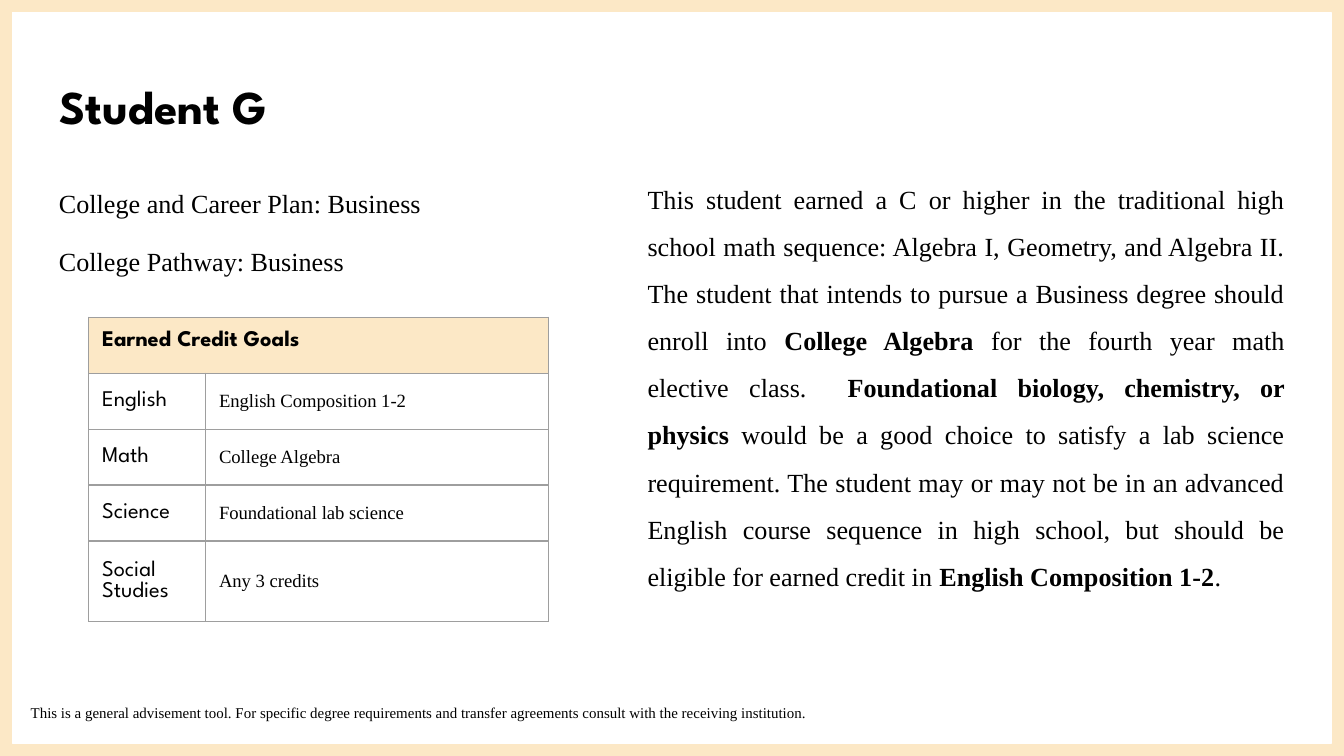
from dataclasses import dataclass

from lxml.etree import SubElement
from pptx import Presentation
from pptx.dml.color import RGBColor
from pptx.enum.shapes import MSO_SHAPE as Shape
from pptx.enum.text import MSO_ANCHOR as Anchor, MSO_AUTO_SIZE as Fit, PP_ALIGN as Align
from pptx.oxml.ns import qn
from pptx.util import Inches, Pt


@dataclass(frozen=True)
class Theme:
    """Colours, fonts and type sizes of the deck."""
    cream: str = "FCE8C6"
    white: str = "FFFFFF"
    ink: str = "000000"
    rule: str = "9E9E9E"
    display: str = "League Spartan"
    serif: str = "Times New Roman"
    title: float = 25.2
    body: float = 14
    label: float = 12
    value: float = 10
    note: float = 8


T = Theme()
WIDTH = 10
HEIGHT = WIDTH * 9 / 16
GOALS = [
    ("English", "English Composition 1-2"),
    ("Math", "College Algebra"),
    ("Science", "Foundational lab science"),
    ("Social Studies", "Any 3 credits"),
]
PLAN = ["College and Career Plan: Business", "College Pathway: Business"]
ADVICE = [
    ("This student earned a C or higher in the traditional high school math "
     "sequence: Algebra I, Geometry, and Algebra II. The student that intends "
     "to pursue a Business degree should enroll into ", False),
    ("College Algebra", True),
    (" for the fourth year math elective class.  ", False),
    ("Foundational biology, chemistry, or physics", True),
    (" would be a good choice to satisfy a lab science requirement. The student "
     "may or may not be in an advanced English course sequence in high school, "
     "but should be eligible for earned credit in ", False),
    ("English Composition 1-2", True),
    (".", False),
]
NOTE = ("This is a general advisement tool. For specific degree requirements and "
        "transfer agreements consult with the receiving institution.")


def rgb(value):
    """Turn a hex string into a colour."""
    return RGBColor.from_string(value)


def add_run(p, text, size, font=T.serif, bold=False):
    """Append one formatted run to a paragraph."""
    r = p.add_run()
    r.text = text
    r.font.size, r.font.name, r.font.bold = Pt(size), font, bold
    r.font.color.rgb = rgb(T.ink)


def set_margins(holder):
    """Give a text frame or cell equal margins."""
    holder.margin_left = holder.margin_right = Inches(0.1)
    holder.margin_top = holder.margin_bottom = Inches(0.1)


def add_text(s, box, anchor=Anchor.TOP):
    """Add an empty wrapping text box and return its frame."""
    tf = s.shapes.add_textbox(*map(Inches, box)).text_frame
    tf.word_wrap = True
    tf.vertical_anchor = anchor
    set_margins(tf)
    return tf


def add_panel(s, width, height):
    """Centre the white page behind everything on the cream background."""
    s.background.fill.solid()
    s.background.fill.fore_color.rgb = rgb(T.cream)
    box = ((WIDTH - width) / 2, (HEIGHT - height) / 2, width, height)
    sp = s.shapes.add_shape(Shape.RECTANGLE, *map(Inches, box))
    sp.shadow.inherit = False
    sp.fill.solid()
    sp.fill.fore_color.rgb = rgb(T.white)
    sp.line.color.rgb = rgb(T.white)
    sp.line.width = Pt(0.75)
    s.shapes._spTree.insert(2, sp._element)


def add_title(s, box, text):
    """Move and format the title placeholder."""
    sp = s.shapes.title
    sp.left, sp.top, sp.width, sp.height = map(Inches, box)
    tf = sp.text_frame
    tf.auto_size = Fit.NONE
    tf.vertical_anchor = Anchor.BOTTOM
    set_margins(tf)
    p = tf.paragraphs[0]
    p.alignment = Align.LEFT
    add_run(p, text, T.title, T.display, True)


def add_plan(s, box, lines):
    """Write the plan and pathway lines."""
    tf = add_text(s, box)
    for i, line in enumerate(lines):
        p = tf.add_paragraph() if i else tf.paragraphs[0]
        p.line_spacing = 1.15
        if i:
            p.space_before = p.space_after = Pt(12)
        add_run(p, line, T.body)


def add_advice(s, box, runs):
    """Write the justified advice paragraph."""
    p = add_text(s, box, Anchor.MIDDLE).paragraphs[0]
    p.alignment = Align.JUSTIFY
    p.line_spacing = 1.5
    p.space_after = Pt(12)
    for text, bold in runs:
        add_run(p, text, T.body, bold=bold)


def style_cell(cell, fill=None):
    """Set borders, fill and margins of a table cell."""
    tc_pr = cell._tc.get_or_add_tcPr()
    for side in ("lnL", "lnR", "lnT", "lnB"):
        ln = SubElement(tc_pr, qn(f"a:{side}"), w=str(Pt(0.75)))
        solid = SubElement(ln, qn("a:solidFill"))
        SubElement(solid, qn("a:srgbClr"), val=T.rule)
    if fill:
        cell.fill.solid()
        cell.fill.fore_color.rgb = rgb(fill)
    else:
        cell.fill.background()
    set_margins(cell)


def add_goals(s, box, heading, rows):
    """Build the credit table under a merged heading."""
    width, height = box[2:]
    frame = s.shapes.add_table(len(rows) + 1, 2, *map(Inches, box))
    table = frame.table
    label_width = 0.87
    table.columns[0].width = Inches(label_width)
    table.columns[1].width = Inches(width - label_width)
    for row in table.rows:
        row.height = Inches(5 / 12)
    frame.height = Inches(height)
    for cell in table.rows[0].cells:
        style_cell(cell, T.cream)
    head = table.cell(0, 0)
    head.merge(table.cell(0, 1))
    add_run(head.text_frame.paragraphs[0], heading, T.label, T.display, True)
    styles = [(T.label, T.display), (T.value, T.serif)]
    for i, texts in enumerate(rows, 1):
        for j, (text, (size, font)) in enumerate(zip(texts, styles)):
            cell = table.cell(i, j)
            style_cell(cell)
            cell.vertical_anchor = Anchor.MIDDLE
            add_run(cell.text_frame.paragraphs[0], text, size, font)


def add_note(s, box, text):
    """Write the footnote in a box that grows with its text."""
    tf = add_text(s, box)
    tf.auto_size = Fit.SHAPE_TO_FIT_TEXT
    add_run(tf.paragraphs[0], text, T.note)


def main():
    """Build and save the student slide."""
    prs = Presentation()
    prs.slide_width, prs.slide_height = Inches(WIDTH), Inches(HEIGHT)
    s = prs.slides.add_slide(prs.slide_layouts[5])
    add_panel(s, 9.81, 5.44)
    add_title(s, (0.34, 0.47, 4.05, 0.63), "Student G")
    add_plan(s, (0.34, 1.26, 4.05, 1.16), PLAN)
    add_advice(s, (4.72, 0.44, 4.94, 4.77), ADVICE)
    add_goals(s, (0.66, 2.36, 3.42, 2.27), "Earned Credit Goals", GOALS)
    add_note(s, (0.13, 5.17, 9.73, 0.29), NOTE)
    prs.save("out.pptx")


if __name__ == "__main__":
    main()
